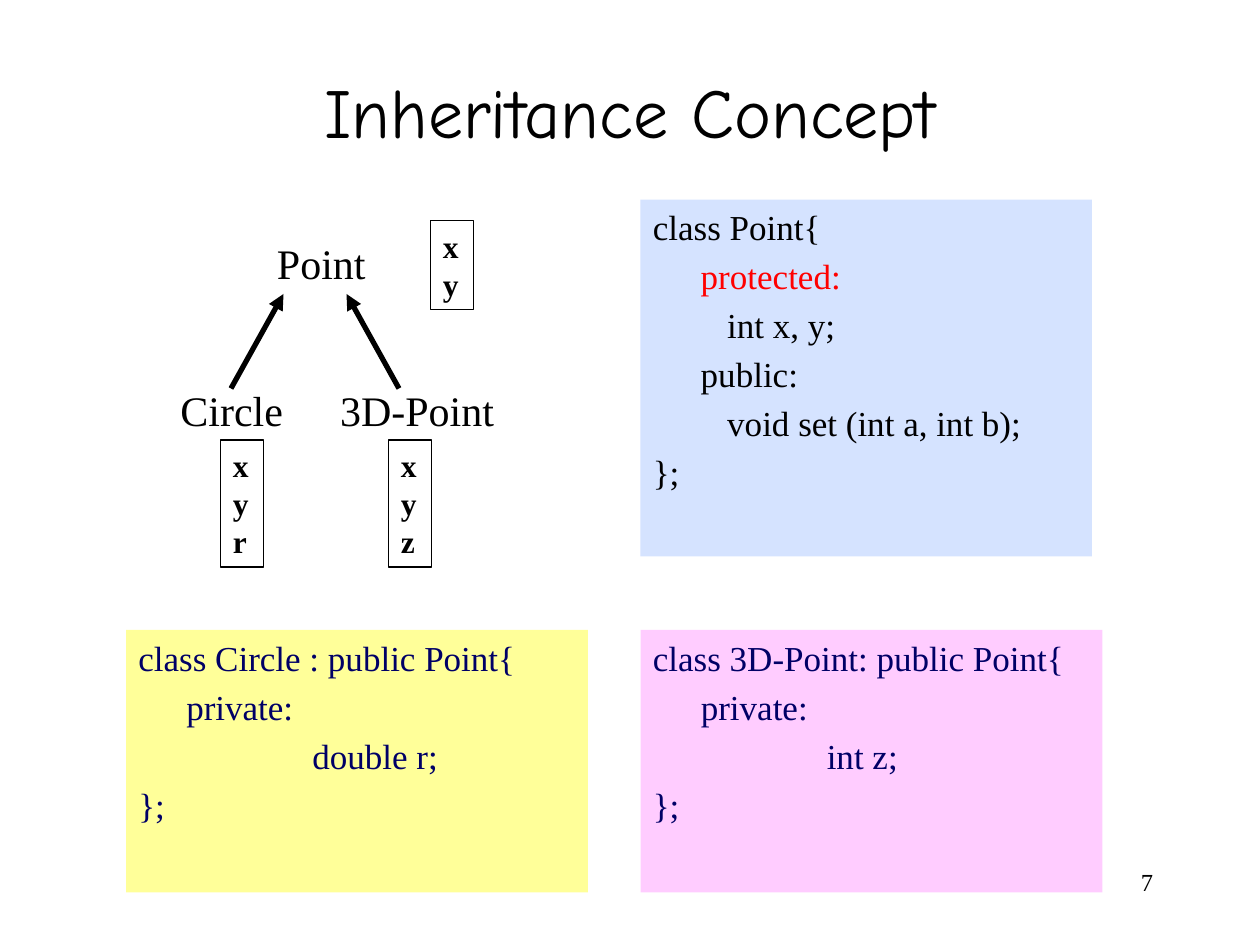
from lxml.etree import SubElement
from pptx import Presentation
from pptx.dml.color import RGBColor
from pptx.enum.shapes import MSO_CONNECTOR, MSO_SHAPE
from pptx.enum.text import MSO_ANCHOR, MSO_AUTO_SIZE, PP_ALIGN
from pptx.oxml.ns import qn
from pptx.util import Inches, Pt

CELL = Inches(1) / 12
SERIF = "Times New Roman"
BLACK = "000000"
NAVY = "000066"
STEP, INNER, DEEP = 0.38, 0.59, 1.38


def grid(*cells):
    return [round(cell * CELL) for cell in cells]


def paint(target, color):
    target.rgb = RGBColor.from_string(color)


def style(par, size, color=BLACK, face=SERIF, bold=False, align=PP_ALIGN.LEFT):
    par.alignment = align
    for run in par.runs:
        run.font.name = face
        run.font.size = Pt(size)
        run.font.bold = bold
        paint(run.font.color, color)


def add_title(slide, text):
    title = slide.shapes.title
    title.left, title.top, title.width, title.height = grid(9, 6, 102, 9)
    frame = title.text_frame
    frame.text = text
    frame.vertical_anchor = MSO_ANCHOR.MIDDLE
    style(frame.paragraphs[0], 40, face="Comic Neue", align=PP_ALIGN.CENTER)


def add_text(slide, text, box, size, align=PP_ALIGN.LEFT):
    frame = slide.shapes.add_textbox(*grid(*box)).text_frame
    frame.text = text
    frame.word_wrap = True
    style(frame.paragraphs[0], size, align=align)
    return frame


def add_label(slide, text, left, top, width):
    frame = add_text(slide, text, (left, top, width, 6), 24)
    frame.word_wrap = False
    frame.auto_size = MSO_AUTO_SIZE.SHAPE_TO_FIT_TEXT


def add_rect(slide, box, text):
    shape = slide.shapes.add_shape(MSO_SHAPE.RECTANGLE, *grid(*box))
    shape.shadow.inherit = False
    shape.text_frame.text = text
    shape.text_frame.vertical_anchor = MSO_ANCHOR.TOP
    return shape


def add_code(slide, box, fill, lines, color):
    shape = add_rect(slide, box, "\n".join(text for text, *_ in lines))
    shape.fill.solid()
    paint(shape.fill.fore_color, fill)
    shape.line.fill.background()
    frame = shape.text_frame
    frame.word_wrap = True
    for row, (par, line) in enumerate(zip(frame.paragraphs, lines)):
        _, indent, *accent = line
        par._p.get_or_add_pPr().set("marL", str(Inches(indent)))
        if row:
            par.space_before = Pt(4)
        style(par, 20, accent[0] if accent else color)


def add_members(slide, left, top, names):
    box = left, top, 4.1, 1.3 + 3.6 * len(names)
    shape = add_rect(slide, box, "\n".join(names))
    shape.fill.background()
    paint(shape.line.color, BLACK)
    shape.line.width = Pt(0.75)
    shape.text_frame.word_wrap = False
    for par in shape.text_frame.paragraphs:
        style(par, 18, bold=True)


def add_arrow(slide, start, end):
    arrow = slide.shapes.add_connector(
        MSO_CONNECTOR.STRAIGHT, *grid(*start, *end))
    paint(arrow.line.color, BLACK)
    arrow.line.width = Pt(3)
    SubElement(arrow.line._get_or_add_ln(), qn("a:tailEnd"), type="triangle")
    SubElement(arrow._element.spPr, qn("a:effectLst"))


def add_child(slide, box, fill, head, field):
    lines = [(head, 0), ("private:", STEP), (field, DEEP), ("};", 0)]
    add_code(slide, box, fill, lines, NAVY)


def main():
    deck = Presentation()
    deck.slide_width, deck.slide_height = grid(120, 90)
    slide = deck.slides.add_slide(deck.slide_layouts[5])

    add_title(slide, "Inheritance Concept")
    add_text(slide, "7", (86, 82, 25, 6), 14, PP_ALIGN.RIGHT)

    add_label(slide, "Point", 25.2, 22, 11)
    add_label(slide, "Circle", 16, 36, 12.4)
    add_label(slide, "3D-Point", 31.2, 36, 17.2)

    point = [
        ("class Point{", 0),
        ("protected:", STEP, "FF0000"),
        ("int x, y;", INNER),
        ("public:", STEP),
        ("void set (int a, int b);", INNER),
        ("};", 0),
    ]
    add_code(slide, (61, 19, 43, 34), "D5E3FF", point, BLACK)
    add_child(slide, (12, 60, 44, 25), "FFFF99",
              "class Circle : public Point{", "double r;")
    add_child(slide, (61, 60, 44, 25), "FFCCFF",
              "class 3D-Point: public Point{", "int z;")

    add_members(slide, 41, 21, "xy")
    add_members(slide, 21, 41.9, "xyr")
    add_members(slide, 37, 41.9, "xyz")

    add_arrow(slide, (22, 37), (27, 28))
    add_arrow(slide, (38, 37), (33, 28))
    deck.save("out.pptx")


if __name__ == "__main__":
    main()
